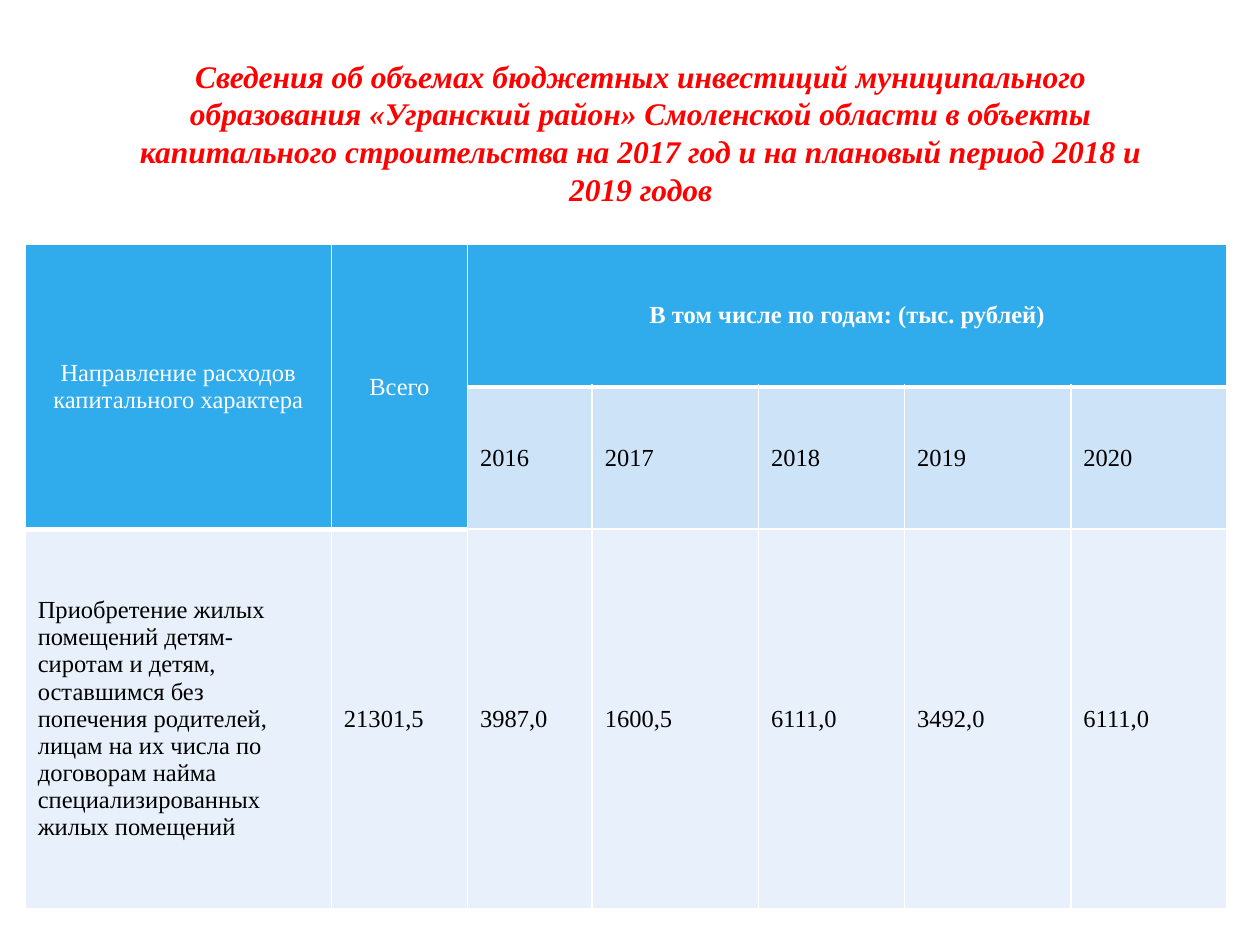
"""Builds a one-slide budget investment table for a municipal district."""
from lxml import etree
from pptx import Presentation
from pptx.dml.color import RGBColor
from pptx.enum.text import MSO_ANCHOR, PP_ALIGN
from pptx.oxml.ns import qn
from pptx.util import Inches, Pt

MIDDLE = MSO_ANCHOR.MIDDLE
CENTER, LEFT = PP_ALIGN.CENTER, PP_ALIGN.LEFT
FONT = "Times New Roman"
WHITE, BLACK, RED = "FFFFFF", "000000", "FF0000"
HEADER, YEARS, BODY = "30ACEC", "CDE3F8", "E8F1FB"

TITLE = ("Сведения об объемах бюджетных инвестиций муниципального образования "
         "«Угранский район» Смоленской области в объекты капитального "
         "строительства на 2017 год и на плановый период 2018 и 2019 годов")
ROWS = [
    ["Направление расходов капитального характера", "Всего",
     "В том числе по годам: (тыс. рублей)", "", "", "", ""],
    ["", "", "2016", "2017", "2018", "2019", "2020"],
    ["Приобретение жилых помещений детям-сиротам и детям, оставшимся без "
     "попечения родителей, лицам на их числа по договорам найма "
     "специализированных жилых помещений",
     "21301,5", "3987,0", "1600,5", "6111,0", "3492,0", "6111,0"],
]
MERGES = [((0, 0), (1, 0)), ((0, 1), (1, 1)), ((0, 2), (0, 6))]
WIDTHS = [2.43, 1.08, 0.99, 1.32, 1.16, 1.32, 1.24]
HEIGHTS = [1.13, 1.13, 3.01]


def color(value):
    return RGBColor.from_string(value)


def write(frame, text, size, ink, align, bold=False, italic=False):
    para = frame.paragraphs[0]
    para.alignment = align
    span = para.add_run()
    span.text = text
    font = span.font
    font.name, font.size, font.bold, font.italic = FONT, Pt(size), bold, italic
    font.color.rgb = color(ink)


def add_borders(cell, top, bottom):
    properties = cell._tc.get_or_add_tcPr()
    for side, width in (("L", 1), ("R", 1), ("T", top), ("B", bottom)):
        line = etree.SubElement(properties, qn(f"a:ln{side}"), w=str(Pt(width)))
        fill = etree.SubElement(line, qn("a:solidFill"))
        etree.SubElement(fill, qn("a:srgbClr"), val=WHITE)


def is_header(row, column):
    return row == 0 or (row == 1 and column < 2)


def add_title(page):
    box = page.shapes.add_textbox(Inches(0.83), Inches(0.4), Inches(8.51), Inches(1.31))
    box.text_frame.word_wrap = True
    write(box.text_frame, TITLE, 18, RED, CENTER, bold=True, italic=True)


def add_investments(page):
    table = page.shapes.add_table(
        len(HEIGHTS), len(WIDTHS), Inches(0.2), Inches(1.94),
        Inches(sum(WIDTHS)), Inches(sum(HEIGHTS))).table
    for column, width in zip(table.columns, WIDTHS):
        column.width = Inches(width)
    for row, height in zip(table.rows, HEIGHTS):
        row.height = Inches(height)
    for start, end in MERGES:
        table.cell(*start).merge(table.cell(*end))
    for row, texts in enumerate(ROWS):
        for column, text in enumerate(texts):
            cell = table.cell(row, column)
            header = is_header(row, column)
            below_header = row > 0 and is_header(row - 1, column)
            add_borders(cell, 3 if below_header else 1, 3 if header else 1)
            cell.fill.solid()
            cell.fill.fore_color.rgb = color(HEADER if header else YEARS if row == 1 else BODY)
            cell.vertical_anchor = MIDDLE
            if text:
                write(cell.text_frame, text, 14, WHITE if header else BLACK,
                      CENTER if header else LEFT, bold=header and column == 2)


def main():
    deck = Presentation()
    deck.slide_width, deck.slide_height = Inches(10), Inches(7.5)
    page = deck.slides.add_slide(deck.slide_layouts[6])
    add_title(page)
    add_investments(page)
    deck.save("out.pptx")


if __name__ == "__main__":
    main()
